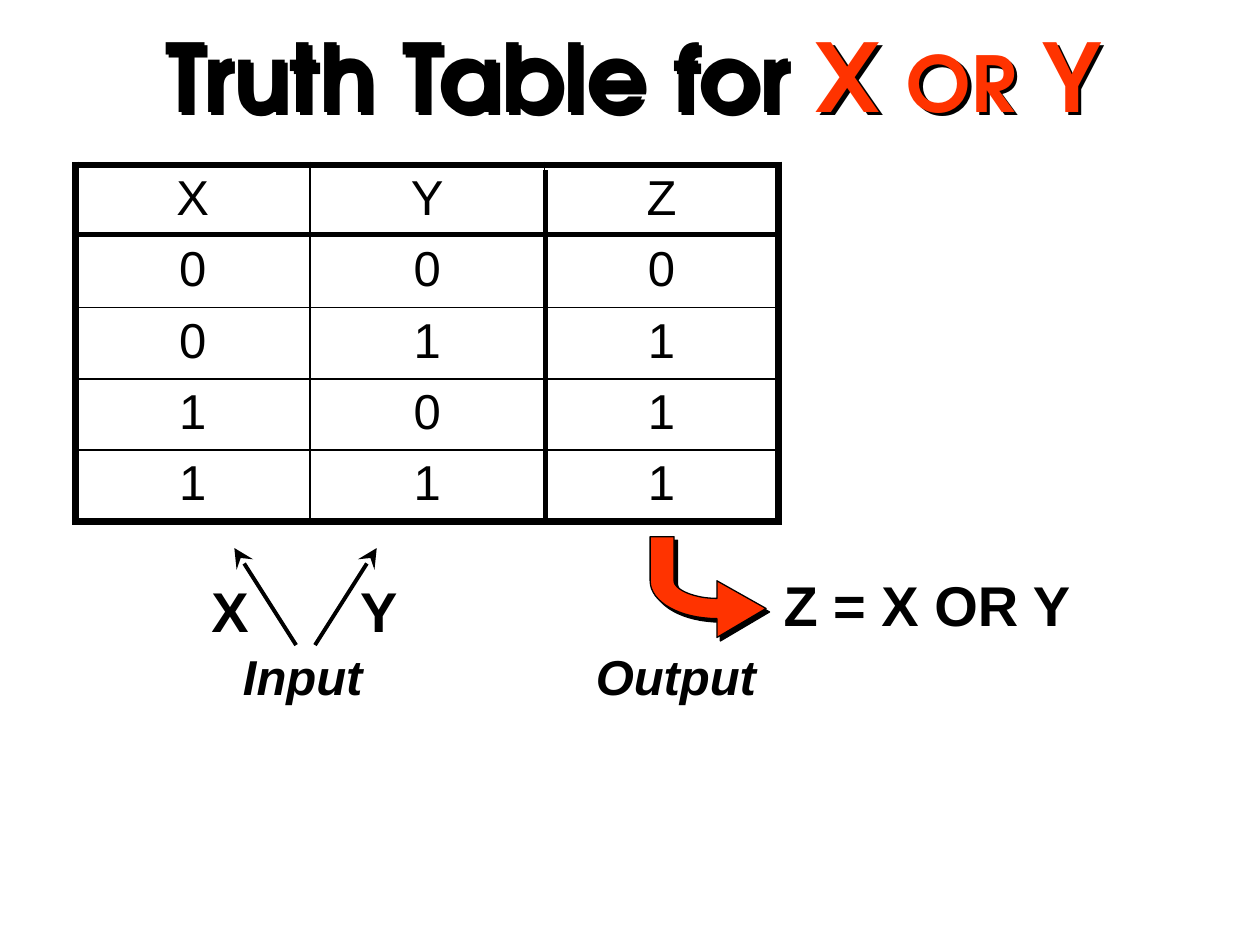
import lxml.etree
import pptx
import pptx.dml.color
import pptx.enum.shapes
import pptx.enum.text
import pptx.oxml
import pptx.oxml.ns
import pptx.util

Inches, Pt = pptx.util.Inches, pptx.util.Pt
qn = pptx.oxml.ns.qn
BLACK = pptx.dml.color.RGBColor(0x00, 0x00, 0x00)
RED = pptx.dml.color.RGBColor(0xFF, 0x33, 0x00)
CENTER = pptx.enum.text.PP_ALIGN.CENTER
NS = 'xmlns:a="http://schemas.openxmlformats.org/drawingml/2006/main"'
SHADOW = (f'<a:effectLst {NS}><a:outerShdw dist="{Pt(2.8)}" dir="2700000" algn="ctr" rotWithShape="0">'
          f'<a:srgbClr val="{BLACK}"/></a:outerShdw></a:effectLst>')


def add_line(x1, y1, x2, y2, width, arrow=False):
    line = s.shapes.add_connector(pptx.enum.shapes.MSO_CONNECTOR.STRAIGHT,
                                  Inches(x1), Inches(y1), Inches(x2), Inches(y2))
    line.line.color.rgb = BLACK
    line.line.width = Pt(width)
    if arrow:
        lxml.etree.SubElement(line.line._get_or_add_ln(), qn("a:tailEnd"),
                              type="stealth", w="lg", len="lg")
    lxml.etree.SubElement(line._element.spPr, qn("a:effectLst"))


def curve(p0, p1, p2, p3, steps=16):
    """Points along a cubic Bezier curve, without its start."""
    points = []
    for i in range(1, steps + 1):
        t = i / steps
        points.append(tuple((1 - t) ** 3 * a + 3 * (1 - t) ** 2 * t * b
                            + 3 * (1 - t) * t ** 2 * c + t ** 3 * d
                            for a, b, c, d in zip(p0, p1, p2, p3)))
    return points


prs = pptx.Presentation()
prs.slide_width, prs.slide_height = Inches(10), Inches(7.5)
s = prs.slides.add_slide(prs.slide_layouts[5])

# Title
title = s.shapes.title
title.left, title.top, title.width, title.height = (Inches(v) for v in (0.39, 0.09, 9.27, 1))
title._element.spPr.append(pptx.oxml.parse_xml(SHADOW))
tf = title.text_frame
tf.auto_size = pptx.enum.text.MSO_AUTO_SIZE.NONE
p = tf.paragraphs[0]
p.alignment = CENTER
p.font.name, p.font.bold = "TeX Gyre Adventor", True
for text, size, color in (("Truth Table for ", 54, BLACK), ("X ", 54, RED),
                          ("OR", 44, RED), (" Y", 54, RED)):
    r = p.add_run()
    r.text = text
    r.font.size = Pt(size)
    r.font.color.rgb = color

# Truth table: thick outer frame, thin inner rules
rows = ["XYZ"] + [f"{x}{y}{x | y}" for x in (0, 1) for y in (0, 1)]
n_rows, n_cols = len(rows), len(rows[0])
left, top, width, height = 0.6, 1.31, 5.58, 2.83
table = s.shapes.add_table(n_rows, n_cols, Inches(left), Inches(top),
                           Inches(width), Inches(height)).table
table.first_row = table.horz_banding = False
for i, values in enumerate(rows):
    for j, value in enumerate(values):
        cell = table.cell(i, j)
        cell.text = value
        p = cell.text_frame.paragraphs[0]
        p.alignment = CENTER
        p.font.name, p.font.size = "Arial", Pt(28)
        p.font.color.rgb = BLACK
        outer = {"L": j == 0, "R": j == n_cols - 1, "T": i == 0, "B": i == n_rows - 1}
        for side, thick in outer.items():
            cell._tc.get_or_add_tcPr().append(pptx.oxml.parse_xml(
                f'<a:ln{side} {NS} w="{Pt(4.5 if thick else 1)}"><a:solidFill>'
                f'<a:srgbClr val="{BLACK}"/></a:solidFill></a:ln{side}>'))
        cell.fill.background()

# Heavier rules beside the output column and below the header
add_line(4.33, 1.35, 4.33, 4.13, 3)
add_line(left, 1.86, 6.17, 1.86, 2.25)

# Input arrows
add_line(2.35, 5.12, 1.86, 4.35, 2.25, arrow=True)
add_line(2.5, 5.12, 2.99, 4.35, 2.25, arrow=True)

# Curved output arrow
outline = [(6.08, 4.83), (5.69, 5.06), (5.69, 4.91)]
outline += curve((5.69, 4.91), (5.4, 4.91), (5.16, 4.78), (5.16, 4.61))
outline += [(5.16, 4.26), (5.35, 4.26), (5.35, 4.61)]
outline += curve((5.35, 4.61), (5.35, 4.68), (5.51, 4.75), (5.69, 4.75))
outline += [(5.69, 4.61)]
outline = [(Inches(x), Inches(y)) for x, y in outline]
builder = s.shapes.build_freeform(*outline[0])
builder.add_line_segments(outline[1:], close=True)
sp = builder.convert_to_shape()
sp.fill.solid()
sp.fill.fore_color.rgb = RED
sp.line.color.rgb = BLACK
sp.line.width = Pt(0.75)
sp._element.spPr.append(pptx.oxml.parse_xml(SHADOW))

# Labels
for text, x, y, w, h, size, italic in (
        ("X", 1.58, 4.53, 0.5, 0.63, 32, False),
        ("Y", 2.76, 4.53, 0.5, 0.63, 32, False),
        ("Z = X OR Y", 6.12, 4.48, 2.49, 0.63, 32, False),
        ("Input", 1.83, 5.08, 1.15, 0.57, 28, True),
        ("Output", 4.63, 5.08, 1.48, 0.57, 28, True)):
    tf = s.shapes.add_textbox(Inches(x), Inches(y), Inches(w), Inches(h)).text_frame
    tf.word_wrap = False
    p = tf.paragraphs[0]
    p.text = text
    p.font.name, p.font.size, p.font.bold, p.font.italic = "Arial", Pt(size), True, italic
    p.font.color.rgb = BLACK

prs.save("out.pptx")
